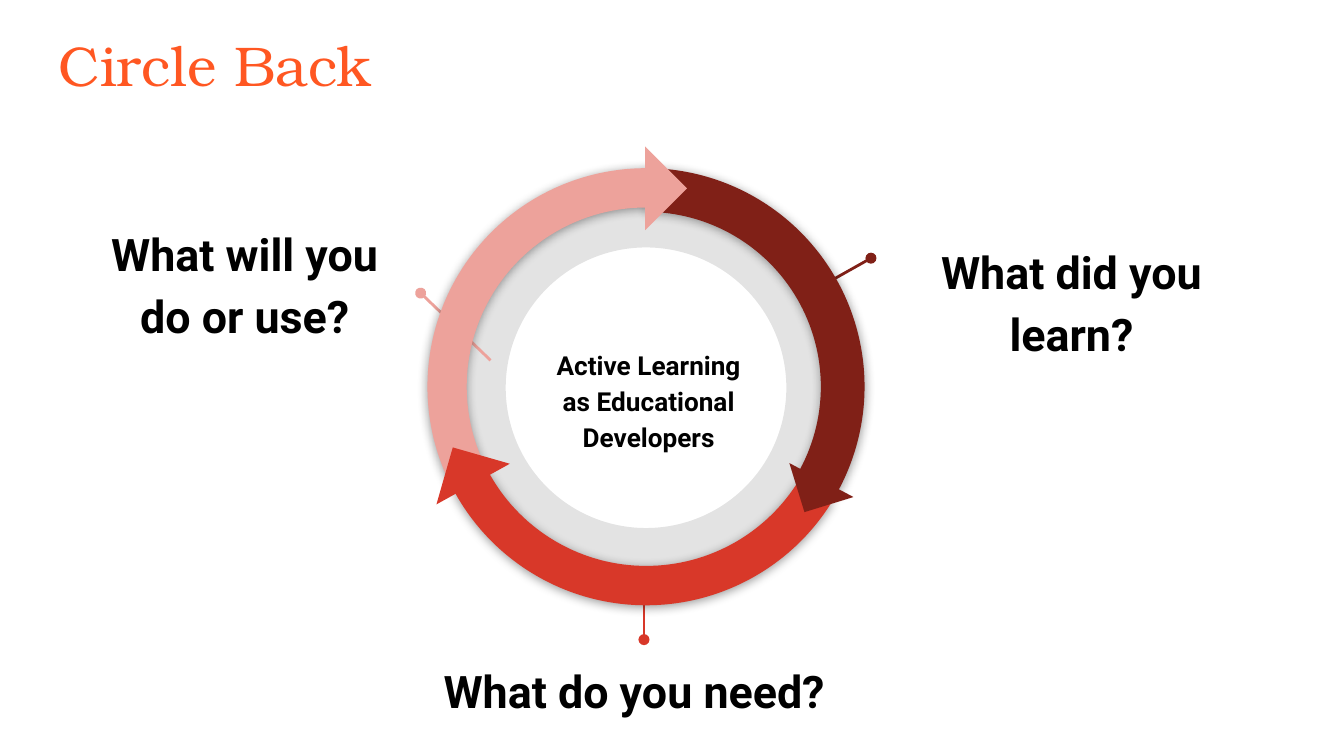
"""Build the Circle Back slide: a three-part cycle with a callout for each part."""
from lxml import etree
from pptx import Presentation
from pptx.dml.color import RGBColor
from pptx.enum.shapes import MSO_CONNECTOR, MSO_SHAPE
from pptx.enum.text import MSO_ANCHOR, MSO_AUTO_SIZE, PP_ALIGN
from pptx.oxml.ns import qn
from pptx.util import Cm, Pt

ORANGE = RGBColor(0xFF, 0x57, 0x22)
BLACK = RGBColor(0, 0, 0)
PINK = RGBColor(0xED, 0xA2, 0x9B)
MAROON = RGBColor(0x80, 0x20, 0x17)
RED = RGBColor(0xD8, 0x38, 0x29)

DONUT = MSO_SHAPE.DONUT
ARC = MSO_SHAPE.BLOCK_ARC
TIP = MSO_SHAPE.RIGHT_TRIANGLE
LINE = MSO_CONNECTOR.STRAIGHT
TOP = MSO_ANCHOR.TOP
MIDDLE = MSO_ANCHOR.MIDDLE
LEFT = PP_ALIGN.LEFT
CENTER = PP_ALIGN.CENTER
FIXED = MSO_AUTO_SIZE.NONE

CALLS = [
    ("What will you do or use?", (1.3, 3.89, 6.65, 3.43), TOP,
     (7.95, 5.54, 9.27, 6.81), PINK),
    ("What did you learn?", (16.48, 3.89, 7.54, 3.51), MIDDLE,
     (16.46, 4.88, 15.11, 5.64), MAROON),
    ("What do you need?", (7.87, 12.14, 8.23, 1.42), TOP,
     (12.17, 12.09, 12.17, 10.69), RED),
]


def add_tag(parent, name, **attrs):
    """Append a drawing element and return it."""
    return etree.SubElement(parent, qn(name), attrs)


def set_frame(frame, anchor):
    """Give a text frame its insets, wrapping and anchor."""
    frame.word_wrap = True
    frame.auto_size = FIXED
    frame.vertical_anchor = anchor
    frame.margin_left = frame.margin_right = Cm(0.25)
    frame.margin_top = frame.margin_bottom = Cm(0.25)


def add_run(para, text, font, size, color, bold):
    """Add one formatted run to a paragraph."""
    run = para.add_run()
    run.text = text
    run.font.name = font
    run.font.size = Pt(size)
    run.font.bold = bold
    run.font.color.rgb = color


def set_title(slide, text):
    """Place and fill the title."""
    title = slide.shapes.title
    title.left, title.top = Cm(0.86), Cm(0.33)
    title.width, title.height = Cm(23.67), Cm(1.6)
    set_frame(title.text_frame, TOP)
    para = title.text_frame.paragraphs[0]
    para.alignment = LEFT
    add_run(para, text, "TeX Gyre Bonum", 30, ORANGE, False)


def add_text(shapes, lines, box, size, anchor):
    """Add a centred bold text box with one paragraph per line."""
    frame = shapes.add_textbox(*map(Cm, box)).text_frame
    set_frame(frame, anchor)
    for i, line in enumerate(lines):
        para = frame.add_paragraph() if i else frame.paragraphs[0]
        para.alignment = CENTER
        para.line_spacing = 1.15
        add_run(para, line, "Roboto", size, BLACK, True)


def add_call(slide, text, box, anchor, ends, color):
    """Add a grouped label and its round-headed pointer."""
    shapes = slide.shapes.add_group_shape().shapes
    line = shapes.add_connector(LINE, *map(Cm, ends))
    line.line.color.rgb = color
    line.line.width = Pt(1.5)
    add_tag(line.line._get_or_add_ln(), "a:headEnd", type="oval")
    add_tag(line._element.spPr, "a:effectLst")
    add_text(shapes, [text], box, 24, anchor)


def add_part(slide, kind, left, top, size, color, turn=0):
    """Add a square, unlined shape in one colour."""
    part = slide.shapes.add_shape(kind, Cm(left), Cm(top), Cm(size), Cm(size))
    part.rotation = turn
    part.shadow.inherit = False
    part.fill.solid()
    part.fill.fore_color.rgb = color
    part.line.fill.background()
    return part


def add_ring(slide):
    """Add the pale ring behind the arcs."""
    ring = add_part(slide, DONUT, 8.31, 3.43, 7.8, BLACK)
    ring.adjustments[0] = 0.16
    tint = ring._element.spPr.find(".//" + qn("a:srgbClr"))
    add_tag(tint, "a:alpha", val="11000")


def add_arc(slide, color, turn, bends, flip):
    """Add one arc of the cycle with a soft shadow."""
    arc = add_part(slide, ARC, 8.08, 3.18, 8.26, color, turn)
    for i, bend in enumerate(bends):
        arc.adjustments[i] = bend
    props = arc._element.spPr
    if flip:
        props.xfrm.set("flipH", "1")
    shade = add_tag(props.find(qn("a:effectLst")), "a:outerShdw",
                    blurRad=str(Pt(5.6)), dist=str(Pt(0.8)),
                    dir="5400000", algn="ctr", rotWithShape="0")
    tint = add_tag(shade, "a:srgbClr", val=str(BLACK))
    add_tag(tint, "a:alpha", val="40000")


def main():
    """Build and save the slide."""
    deck = Presentation()
    deck.slide_width, deck.slide_height = Cm(25.4), Cm(14.29)
    slide = deck.slides.add_slide(deck.slide_layouts[5])
    set_title(slide, "Circle Back")
    add_ring(slide)
    for call in CALLS:
        add_call(slide, *call)
    add_text(slide.shapes, ["Active Learning", "as Educational Developers"],
             (9.86, 5.97, 4.8, 3.12), 14, MIDDLE)
    add_arc(slide, MAROON, 30, (144.14, 0.01, 0.1), False)
    add_arc(slide, PINK, 330, (143.49, 214.73, 0.09), True)
    add_part(slide, TIP, 11.63, 3, 1.12, PINK, 225)
    add_arc(slide, RED, 210, (143.16, 215.03, 0.09), True)
    add_part(slide, TIP, 15.04, 8.59, 0.97, MAROON, 342.9)
    add_part(slide, TIP, 8.38, 8.59, 1.12, RED, 106)
    deck.save("out.pptx")


if __name__ == "__main__":
    main()
